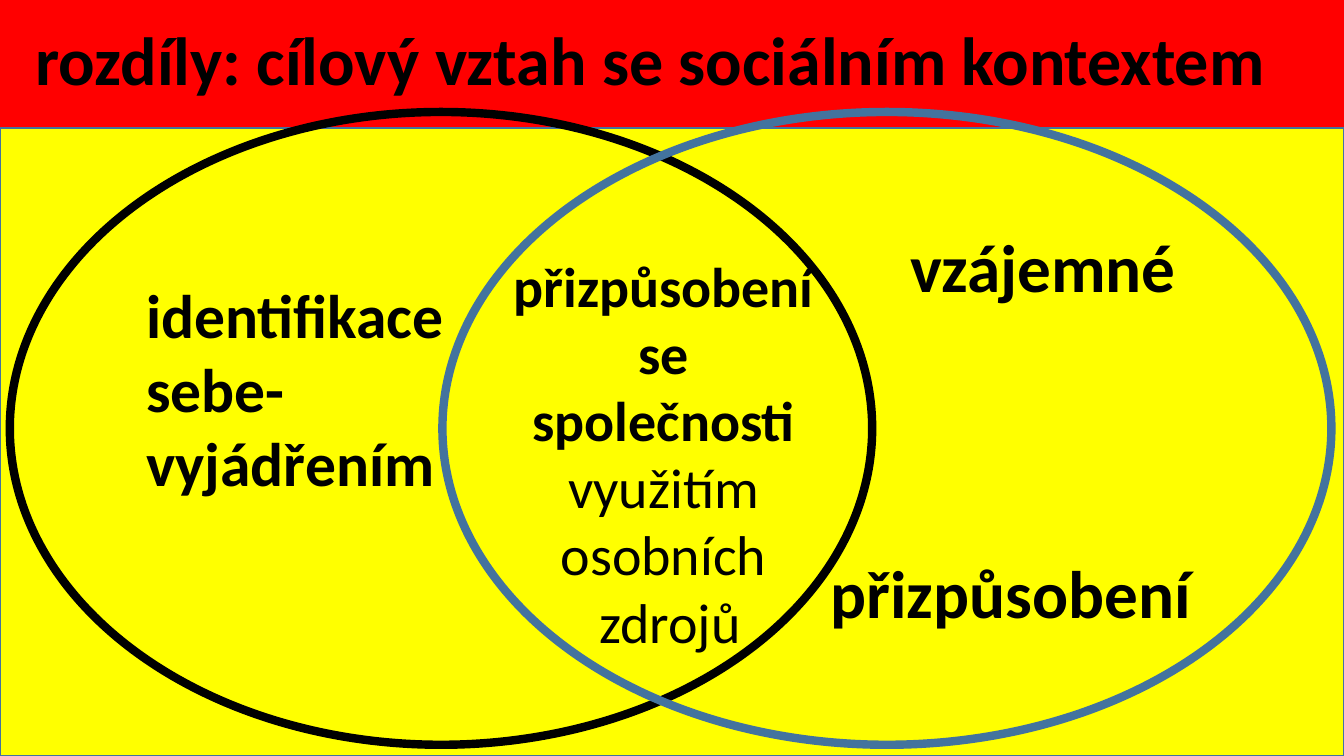
import dataclasses

import pptx
import pptx.dml.color
import pptx.enum.shapes
import pptx.enum.text
import pptx.util

Pt = pptx.util.Pt
Align = pptx.enum.text.PP_ALIGN
Preset = pptx.enum.shapes.MSO_SHAPE


@dataclasses.dataclass(frozen=True)
class Theme:
    font: str = "Calibri"
    red: str = "FF0000"
    yellow: str = "FFFF00"
    black: str = "000000"
    blue: str = "43739E"
    title_size: float = 48.6
    left_size: float = 44
    right_size: float = 48
    shared_size: float = 40


THEME = Theme()
SLIDE_WIDTH, SLIDE_HEIGHT = 960, 540
TITLE_BOTTOM = 91.5
ELLIPSE_TOP, ELLIPSE_HEIGHT = 80, 452


def color(code):
    return pptx.dml.color.RGBColor.from_string(code)


def place(shape, left, top, width, height):
    shape.left, shape.top = Pt(left), Pt(top)
    shape.width, shape.height = Pt(width), Pt(height)


def write_text(shape, paragraphs, size, align=Align.LEFT, gap=0,
               line_spacing=None, inset_right=7.2, inset_top=3.6, inset_bottom=3.6):
    frame = shape.text_frame
    frame.word_wrap = True
    frame.auto_size = pptx.enum.text.MSO_AUTO_SIZE.NONE
    frame.vertical_anchor = pptx.enum.text.MSO_ANCHOR.MIDDLE
    frame.margin_left, frame.margin_right = Pt(7.2), Pt(inset_right)
    frame.margin_top, frame.margin_bottom = Pt(inset_top), Pt(inset_bottom)
    for index, runs in enumerate(paragraphs):
        paragraph = frame.add_paragraph() if index else frame.paragraphs[0]
        paragraph.alignment = align
        paragraph.space_before = Pt(gap if index else 0)
        if line_spacing:
            paragraph.line_spacing = line_spacing
        for text, bold in runs:
            run = paragraph.add_run()
            run.text = text
            run.font.name = THEME.font
            run.font.size = Pt(size)
            run.font.bold = bold
            run.font.color.rgb = color(THEME.black)


def add_title(slide, text):
    title = slide.shapes.title
    place(title, 0, -0.5, SLIDE_WIDTH, TITLE_BOTTOM + 0.5)
    title.fill.solid()
    title.fill.fore_color.rgb = color(THEME.red)
    write_text(title, [[(text, True)]], THEME.title_size, align=Align.CENTER,
               line_spacing=0.9, inset_right=38)


def add_outlined_shape(slide, preset, box, line, line_width, fill=None):
    shape = slide.shapes.add_shape(preset, *map(Pt, box))
    shape.shadow.inherit = False
    if fill:
        shape.fill.solid()
        shape.fill.fore_color.rgb = color(fill)
    else:
        shape.fill.background()
    shape.line.color.rgb = color(line)
    shape.line.width = Pt(line_width)
    return shape


def add_ellipse(slide, left, width, line):
    box = (left, ELLIPSE_TOP, width, ELLIPSE_HEIGHT)
    return add_outlined_shape(slide, Preset.OVAL, box, line, 6)


def main():
    presentation = pptx.Presentation()
    presentation.slide_width = Pt(SLIDE_WIDTH)
    presentation.slide_height = Pt(SLIDE_HEIGHT)
    slide = presentation.slides.add_slide(presentation.slide_layouts[5])

    add_title(slide, "rozdíly: cílový vztah se sociálním kontextem")
    background_box = (0, TITLE_BOTTOM, SLIDE_WIDTH, SLIDE_HEIGHT - TITLE_BOTTOM)
    add_outlined_shape(slide, Preset.RECTANGLE, background_box, THEME.blue, 1, THEME.yellow)

    identification = add_ellipse(slide, 7, 616, THEME.black)
    write_text(identification,
               [[("identifikace", True)], [("sebe-", True)], [("vyjádřením", True)]],
               THEME.left_size, inset_bottom=61)

    adaptation = add_ellipse(slide, 316, 635, THEME.blue)
    write_text(adaptation, [[("vzájemné ", True)], [("přizpůsobení", True)]],
               THEME.right_size, align=Align.RIGHT, gap=175)

    shared = slide.shapes.add_textbox(Pt(316), Pt(TITLE_BOTTOM), Pt(316), Pt(415))
    write_text(shared,
               [[("přizpůsobení", True)], [("se", True)],
                [("společnosti ", True), ("využitím", False)],
                [("osobních", False)], [(" zdrojů", False)]],
               THEME.shared_size, align=Align.CENTER, inset_top=52.4)

    presentation.save("out.pptx")


if __name__ == "__main__":
    main()
